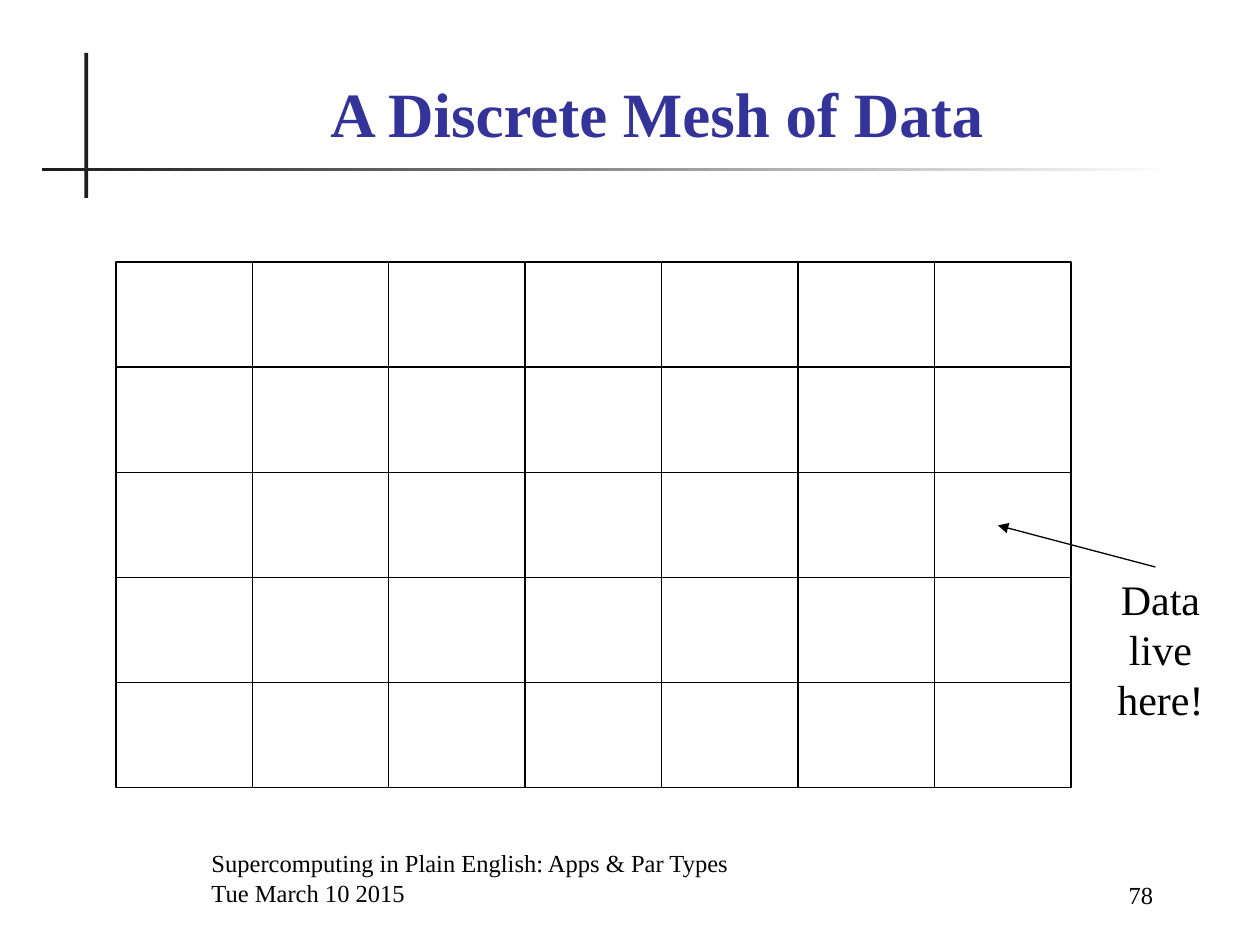
"""Builds the slide with a discrete mesh of data cells."""
from lxml import etree
from pptx import Presentation
from pptx.dml.color import RGBColor
from pptx.enum import shapes, text
from pptx.oxml import ns
from pptx.util import Inches, Pt

theme = {
    "font": "Times New Roman",
    "ink": RGBColor(0, 0, 0),
    "bar": RGBColor(0x1C, 0x1C, 0x1C),
    "pale": RGBColor(255, 255, 255),
    "title": RGBColor(0x33, 0x33, 0x99),
    "head": Pt(36),
    "body": Pt(24),
    "foot": Pt(14),
    "line": Pt(0.75),
}
LEFT, MID, RIGHT = text.PP_ALIGN.LEFT, text.PP_ALIGN.CENTER, text.PP_ALIGN.RIGHT
TOP, LOW = text.MSO_ANCHOR.TOP, text.MSO_ANCHOR.BOTTOM


def write(box, lines, size, align, anchor, color="ink", bold=False):
    frame = box.text_frame
    frame.word_wrap = True
    frame.auto_size = text.MSO_AUTO_SIZE.NONE
    frame.vertical_anchor = anchor
    frame.text = lines
    look = {"name": theme["font"], "size": theme[size], "bold": bold}
    for para in frame.paragraphs:
        para.alignment = align
        para.space_before = Pt(0)
        for key, value in look.items():
            setattr(para.font, key, value)
        para.font.color.rgb = theme[color]


def block(left, top, width, height):
    rect = slide.shapes.add_shape(shapes.MSO_SHAPE.RECTANGLE, left, top, width, height)
    rect.shadow.inherit = False
    return rect


deck = Presentation()
deck.slide_width, deck.slide_height = Inches(10), Inches(7.5)
slide = deck.slides.add_slide(deck.slide_layouts[5])

post = block(Inches(0.67), Inches(0.42), Inches(0.03), Inches(1.15))
post.fill.solid()
post.fill.fore_color.rgb = theme["bar"]
rule = block(Inches(0.33), Inches(1.33), Inches(9), Inches(0.03))
rule.fill.gradient()
rule.fill.gradient_angle = 0
for stop, shade, place in zip(rule.fill.gradient_stops, ("bar", "pale"), (0, 1)):
    stop.color.rgb = theme[shade]
    stop.position = place
for bar in (post, rule):
    bar.line.fill.background()

title = slide.shapes.title
spot = {"left": 0.83, "top": 0.5, "width": 8.77, "height": 0.74}
for side, value in spot.items():
    setattr(title, side, Inches(value))
write(title, "A Discrete Mesh of Data", "head", MID, LOW, "title", True)

cols, rows = 7, 5
left, top = Inches(0.92), Inches(2.08)
wide, high = Inches(7.58) // cols, Inches(4.17) // rows
for row in range(rows):
    for col in range(cols):
        cell = block(left + col * wide, top + row * high, wide, high)
        cell.fill.background()
        cell.line.color.rgb = theme["ink"]
        cell.line.width = theme["line"]

arrow = slide.shapes.add_connector(
    shapes.MSO_CONNECTOR.STRAIGHT, Inches(9.17), Inches(4.5), Inches(7.92), Inches(4.17)
)
arrow.line.color.rgb = theme["ink"]
arrow.line.width = theme["line"]
etree.SubElement(arrow.line._get_or_add_ln(), ns.qn("a:tailEnd"), type="triangle")
etree.SubElement(arrow._element.spPr, ns.qn("a:effectLst"))

notes = [
    ((8.67, 4.5, 1.08, 1.3), "Data live here!", "body", MID, TOP),
    (
        (1.58, 6.75, 6.08, 0.5),
        "Supercomputing in Plain English: Apps & Par Types\nTue March 10 2015",
        "foot", LEFT, LOW,
    ),
    ((7.83, 6.77, 1.42, 0.5), "78", "foot", RIGHT, LOW),
]
for place, words, size, align, anchor in notes:
    box = slide.shapes.add_textbox(*map(Inches, place))
    write(box, words, size, align, anchor)

deck.save("out.pptx")
